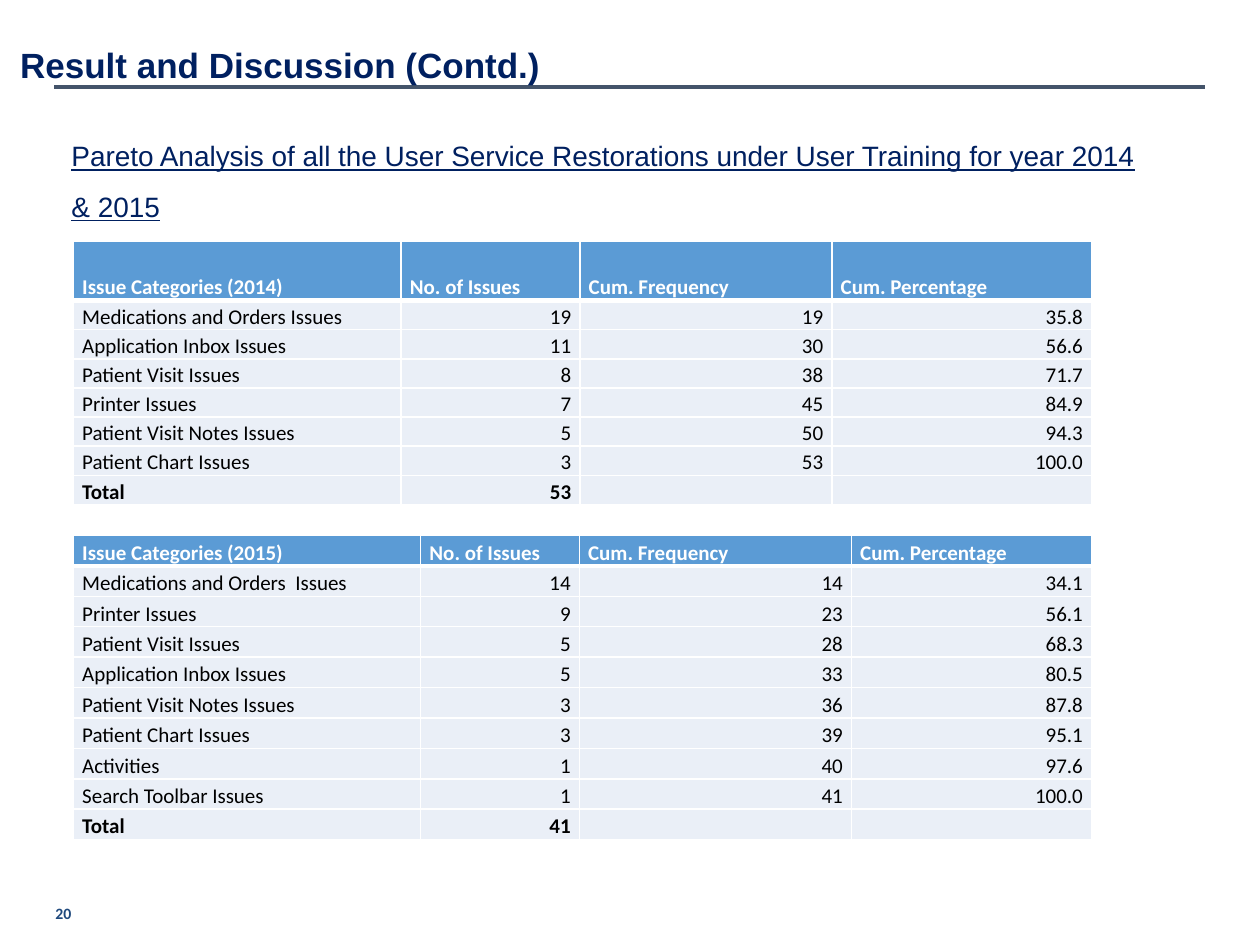
from lxml import etree
from pptx import Presentation
from pptx import util as u
from pptx.dml.color import RGBColor
from pptx.enum import shapes, text
from pptx.oxml import ns

NAVY = RGBColor(0x00, 0x20, 0x60)
SLATE = RGBColor(0x44, 0x54, 0x6A)
BLUE = RGBColor(0x1F, 0x49, 0x7D)
HEADER = RGBColor(0x5B, 0x9B, 0xD5)
BAND = RGBColor(0xEA, 0xEF, 0xF7)
WHITE = RGBColor(0xFF, 0xFF, 0xFF)
BLACK = RGBColor(0x00, 0x00, 0x00)

MEASURES = ["No. of Issues", "Cum. Frequency", "Cum. Percentage"]
ISSUES_2014 = [
    ["Issue Categories (2014)", *MEASURES],
    ["Medications and Orders Issues", "19", "19", "35.8"],
    ["Application Inbox Issues", "11", "30", "56.6"],
    ["Patient Visit Issues", "8", "38", "71.7"],
    ["Printer Issues", "7", "45", "84.9"],
    ["Patient Visit Notes Issues", "5", "50", "94.3"],
    ["Patient Chart Issues", "3", "53", "100.0"],
    ["Total", "53", "", ""],
]
ISSUES_2015 = [
    ["Issue Categories (2015)", *MEASURES],
    ["Medications and Orders  Issues", "14", "14", "34.1"],
    ["Printer Issues", "9", "23", "56.1"],
    ["Patient Visit Issues", "5", "28", "68.3"],
    ["Application Inbox Issues", "5", "33", "80.5"],
    ["Patient Visit Notes Issues", "3", "36", "87.8"],
    ["Patient Chart Issues", "3", "39", "95.1"],
    ["Activities", "1", "40", "97.6"],
    ["Search Toolbar Issues", "1", "41", "100.0"],
    ["Total", "41", "", ""],
]


def apply(target, values):
    """Set each named attribute of the target."""
    for name, value in values.items():
        setattr(target, name, value)


def write(paragraph, words, color, font, layout):
    """Write one formatted run into a paragraph."""
    run = paragraph.add_run()
    run.text = words
    apply(run.font, font)
    run.font.color.rgb = color
    apply(paragraph, layout)


def add_words(slide, box, words, color, font, layout, frame):
    """Place a wrapped text box in the given box."""
    body = slide.shapes.add_textbox(*map(u.Pt, box)).text_frame
    apply(body, {"word_wrap": True, **frame})
    write(body.paragraphs[0], words, color, font, layout)


def add_heading(slide, box):
    """Place the slide title."""
    add_words(slide, box, "Result and Discussion (Contd.)", NAVY,
              {"name": "Arial", "size": u.Pt(20), "bold": True},
              {"line_spacing": 0.9},
              {"vertical_anchor": text.MSO_ANCHOR.MIDDLE,
               "margin_left": u.Pt(11.5)})


def add_rule(slide, box):
    """Draw the rule along the top of the box."""
    left, top, width, _ = box
    rule = slide.shapes.add_connector(
        shapes.MSO_CONNECTOR.STRAIGHT,
        *map(u.Pt, (left, top, left + width, top)))
    rule.line.color.rgb = SLATE
    rule.line.width = u.Pt(2.25)
    etree.SubElement(rule._element.spPr, ns.qn("a:effectLst"))


def add_subtitle(slide, box):
    """Place the underlined description of the analysis."""
    add_words(slide, box,
              "Pareto Analysis of all the User Service Restorations "
              "under User Training for year 2014 & 2015", NAVY,
              {"name": "Arial", "size": u.Pt(16), "underline": True},
              {"line_spacing": 1.5}, {})


def add_page_number(slide, box):
    """Place the page number."""
    margins = dict.fromkeys(
        ["margin_left", "margin_top", "margin_right", "margin_bottom"], 0)
    add_words(slide, box, "20", BLUE,
              {"name": "Calibri", "size": u.Pt(9), "bold": True},
              {"line_spacing": u.Pt(10.8)}, margins)


def add_borders(cell, top, bottom):
    """Give a cell white borders with the given top and bottom widths."""
    properties = cell._tc.get_or_add_tcPr()
    for side, width in {"L": 1, "R": 1, "T": top, "B": bottom}.items():
        line = etree.SubElement(properties, ns.qn(f"a:ln{side}"),
                                w=str(u.Pt(width)))
        fill = etree.SubElement(line, ns.qn("a:solidFill"))
        etree.SubElement(fill, ns.qn("a:srgbClr"), val=str(WHITE))


def fill_cell(cell, words, row, column, is_total):
    """Format one cell by its row and column and write its words."""
    is_header = row == 0
    add_borders(cell, 3 if row == 1 else 1, 3 if is_header else 1)
    apply(cell, {"vertical_anchor": text.MSO_ANCHOR.BOTTOM,
                 "margin_left": u.Pt(5), "margin_right": u.Pt(5),
                 "margin_top": 0, "margin_bottom": 0})
    cell.fill.solid()
    cell.fill.fore_color.rgb = HEADER if is_header else BAND
    paragraph = cell.text_frame.paragraphs[0]
    if not words:
        etree.SubElement(paragraph._p, ns.qn("a:endParaRPr"), sz="1200")
        return
    is_number = column > 0 and not is_header
    align = text.PP_ALIGN.RIGHT if is_number else text.PP_ALIGN.LEFT
    write(paragraph, words, WHITE if is_header else BLACK,
          {"name": "Calibri", "size": u.Pt(12),
           "bold": is_header or is_total},
          {"line_spacing": 1.15, "alignment": align})


def add_issue_table(slide, box, issues, widths, header_height):
    """Place a Pareto table, sharing the height left under its header."""
    table = slide.shapes.add_table(
        len(issues), len(widths), *map(u.Pt, box)).table
    for column, width in zip(table.columns, widths):
        column.width = u.Pt(width)
    row_height = (box[3] - header_height) / (len(issues) - 1)
    for i, issue in enumerate(issues):
        table.rows[i].height = u.Pt(row_height if i else header_height)
        for j, words in enumerate(issue):
            fill_cell(table.cell(i, j), words, i, j, issue[0] == "Total")


def main():
    """Build and save the slide."""
    deck = Presentation()
    apply(deck, {"slide_width": u.Pt(720), "slide_height": u.Pt(540)})
    slide = deck.slides.add_slide(deck.slide_layouts[6])
    add_rule(slide, (31, 49.7, 657.4, 0))
    add_page_number(slide, (31.7, 516.2, 24, 11.5))
    add_heading(slide, (0, 21, 665, 34.6))
    add_subtitle(slide, (33.8, 66.2, 635.8, 154.8))
    add_issue_table(slide, (42, 138, 581.8, 150.4), ISSUES_2014,
                    (187.2, 102.2, 144, 148.4), 33.8)
    add_issue_table(slide, (42, 306, 581.8, 174), ISSUES_2015,
                    (198.4, 90.7, 155.5, 137.2), 17.4)
    deck.save("out.pptx")


if __name__ == "__main__":
    main()
